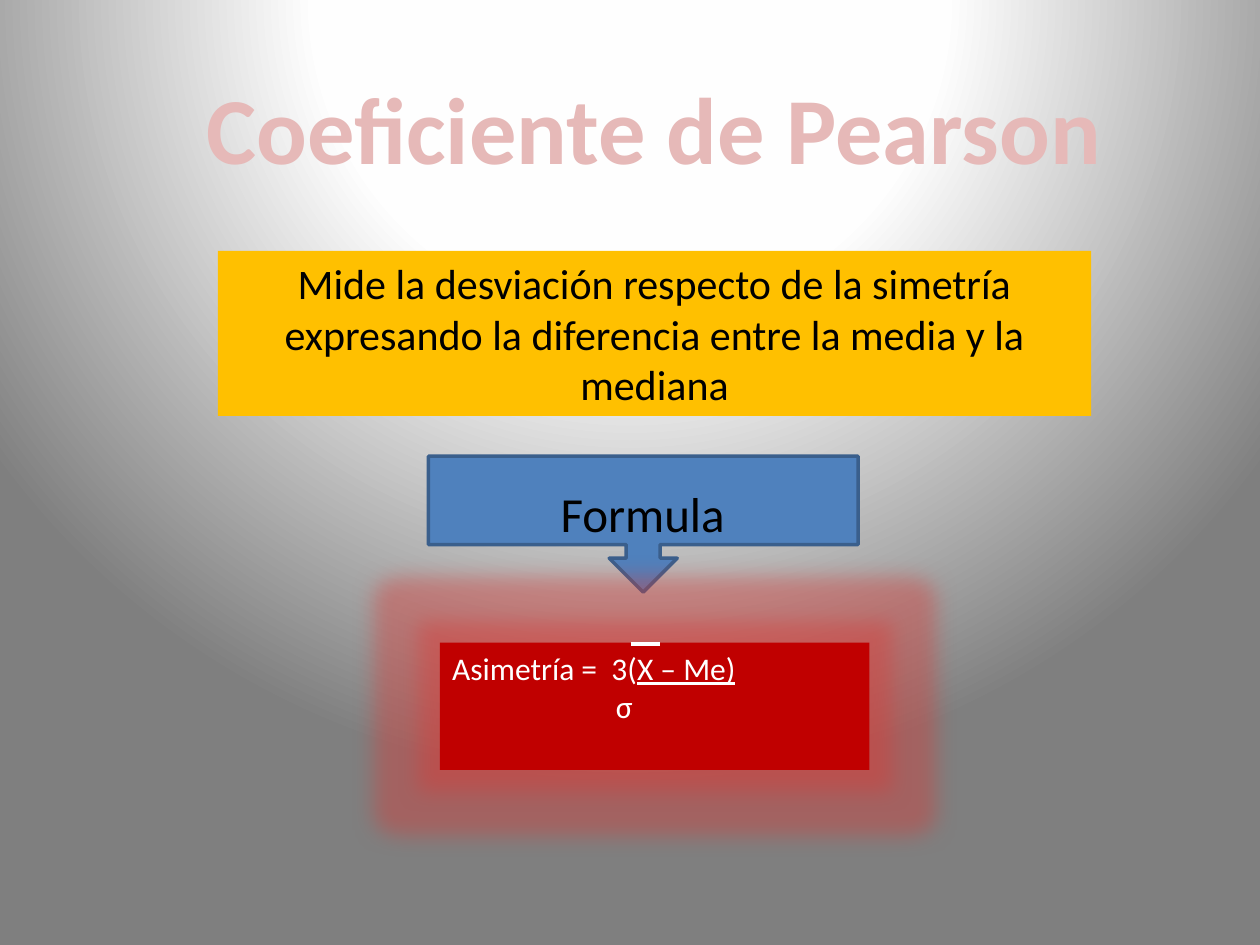
from dataclasses import dataclass
from typing import Optional

import pptx
import pptx.dml.color
import pptx.enum.shapes
import pptx.enum.text
import pptx.oxml
import pptx.oxml.ns
import pptx.util

Inches = pptx.util.Inches
Pt = pptx.util.Pt
RGBColor = pptx.dml.color.RGBColor
Shape = pptx.enum.shapes.MSO_SHAPE
Align = pptx.enum.text.PP_ALIGN

BLACK = RGBColor(0x00, 0x00, 0x00)
WHITE = RGBColor(0xFF, 0xFF, 0xFF)
BLUE = RGBColor(0x4F, 0x81, 0xBD)
DARK_BLUE = RGBColor(0x3A, 0x5F, 0x8C)
AMBER = RGBColor(0xFF, 0xC0, 0x00)
RED = RGBColor(0xC0, 0x00, 0x00)
GLOW_RED = RGBColor(0xDA, 0x38, 0x34)
PINK = RGBColor(0xE6, 0xB9, 0xB8)
BRICK = RGBColor(0xC0, 0x50, 0x4D)
GRADIENT_STOPS = (
    (0, WHITE),
    (40, RGBColor(0xFE, 0xFE, 0xFE)),
    (100, RGBColor(0x7F, 0x7F, 0x7F)),
)
NAMESPACE = pptx.oxml.ns.nsdecls("a")


@dataclass(frozen=True)
class Panel:
    left: float
    top: float
    width: float
    height: float
    fill: RGBColor
    preset: Shape = Shape.RECTANGLE
    line: Optional[RGBColor] = None


@dataclass(frozen=True)
class Label:
    text: str
    size: int
    color: RGBColor = BLACK
    bold: Optional[bool] = None


CALLOUT = Panel(3.4, 3.62, 3.41, 1.08, BLUE, Shape.DOWN_ARROW_CALLOUT, DARK_BLUE)
DEFINITION = Panel(1.73, 1.99, 6.93, 1.31, AMBER)
FORMULA = Panel(3.49, 5.1, 3.41, 1.01, RED)


def paint_background(page) -> None:
    """Fill the page with a radial gradient centred above the middle."""
    page.background.fill.gradient()
    gradient = next(page.element.iter(pptx.oxml.ns.qn("a:gradFill")))
    stops = "".join(
        f'<a:gs pos="{position * 1000}"><a:srgbClr val="{color}"/></a:gs>'
        for position, color in GRADIENT_STOPS
    )
    radial = pptx.oxml.parse_xml(
        f'<a:gradFill {NAMESPACE} rotWithShape="1"><a:gsLst>{stops}</a:gsLst>'
        '<a:path path="circle"><a:fillToRect l="50000" t="-80000" r="50000" '
        'b="180000"/></a:path></a:gradFill>'
    )
    gradient.getparent().replace(gradient, radial)


def add_panel(page, panel: Panel):
    shape = page.shapes.add_shape(
        panel.preset, Inches(panel.left), Inches(panel.top),
        Inches(panel.width), Inches(panel.height),
    )
    shape.shadow.inherit = False
    shape.fill.solid()
    shape.fill.fore_color.rgb = panel.fill
    if panel.line is None:
        shape.line.fill.background()
    else:
        shape.line.color.rgb = panel.line
        shape.line.width = Pt(2)
    return shape


def add_label_box(page, left: float, top: float, width: float, height: float, label: Label):
    box = page.shapes.add_textbox(Inches(left), Inches(top), Inches(width), Inches(height))
    box.text_frame.word_wrap = False
    write_label(box, label)
    return box


def write_label(shape, label: Label) -> None:
    """Put one centred paragraph into the shape."""
    para = shape.text_frame.paragraphs[0]
    para.text = label.text
    para.alignment = Align.CENTER
    style_span(para.runs[0], label.size, label.color, label.bold)


def style_span(span, size: int, color: RGBColor, bold: Optional[bool] = None) -> None:
    span.font.name = "Calibri"
    span.font.size = Pt(size)
    span.font.color.rgb = color
    span.font.bold = bold


def outline_span(span, color: RGBColor, width: float) -> None:
    outline = pptx.oxml.parse_xml(
        f'<a:ln {NAMESPACE} w="{Pt(width)}"><a:solidFill>'
        f'<a:srgbClr val="{color}"/></a:solidFill></a:ln>'
    )
    span.font._element.insert(0, outline)


def add_glow(shape, radius: float, color: RGBColor, opacity: int) -> None:
    effects = shape._element.spPr.find(pptx.oxml.ns.qn("a:effectLst"))
    effects.append(pptx.oxml.parse_xml(
        f'<a:glow {NAMESPACE} rad="{Inches(radius)}"><a:srgbClr val="{color}">'
        f'<a:alpha val="{opacity * 1000}"/></a:srgbClr></a:glow>'
    ))


def add_formula(page) -> None:
    shape = add_panel(page, FORMULA)
    add_glow(shape, 0.35, GLOW_RED, 40)
    frame = shape.text_frame
    frame.word_wrap = True
    frame.vertical_anchor = pptx.enum.text.MSO_ANCHOR.TOP
    numerator, denominator = frame.paragraphs[0], frame.add_paragraph()
    numerator.text = "Asimetría =  3("
    underlined = numerator.add_run()
    underlined.text = "X – Me)"
    underlined.font.underline = True
    denominator.text = "σ"
    denominator._p.get_or_add_pPr().set("marL", str(Inches(1.3)))
    for para in (numerator, denominator):
        para.alignment = Align.LEFT
        for span in para.runs:
            style_span(span, 18, WHITE)


def add_mean_bar(page) -> None:
    """Draw the bar over the X of the formula."""
    bar = page.shapes.add_connector(
        pptx.enum.shapes.MSO_CONNECTOR.STRAIGHT,
        Inches(5.01), Inches(5.11), Inches(5.24), Inches(5.11),
    )
    bar.line.color.rgb = WHITE
    bar.line.width = Pt(2.25)
    bar._element.spPr.append(pptx.oxml.parse_xml(f"<a:effectLst {NAMESPACE}/>"))


def main() -> None:
    deck = pptx.Presentation()
    deck.slide_width, deck.slide_height = Inches(10), Inches(7.5)
    page = deck.slides.add_slide(deck.slide_layouts[6])
    paint_background(page)

    add_panel(page, CALLOUT)
    definition = add_panel(page, DEFINITION)
    definition.text_frame.word_wrap = True
    write_label(definition, Label(
        "Mide la desviación respecto de la simetría expresando "
        "la diferencia entre la media y la mediana", 24,
    ))
    add_formula(page)
    add_mean_bar(page)
    add_label_box(page, 4.34, 3.79, 1.52, 0.57, Label("Formula", 28))
    title = add_label_box(
        page, 1.5, 0.51, 7.38, 1.01, Label("Coeficiente de Pearson", 54, PINK, True)
    )
    outline_span(title.text_frame.paragraphs[0].runs[0], BRICK, 1.75)
    deck.save("out.pptx")


if __name__ == "__main__":
    main()
